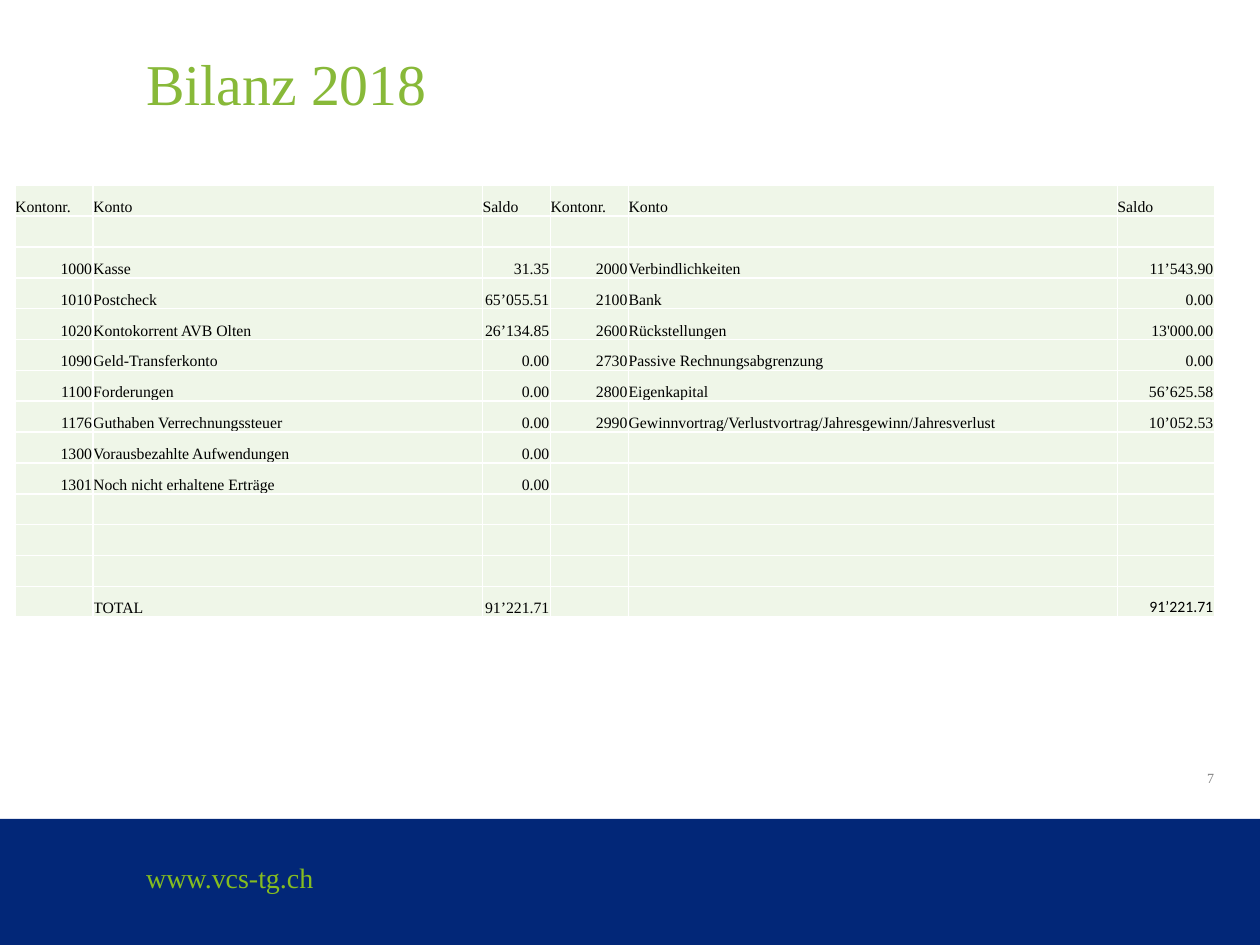
from lxml import etree
from pptx import Presentation
from pptx.dml.color import RGBColor
from pptx.enum.shapes import MSO_SHAPE
from pptx.enum.text import MSO_ANCHOR, MSO_AUTO_SIZE, PP_ALIGN
from pptx.oxml import parse_xml
from pptx.oxml.ns import nsdecls, qn
from pptx.util import Inches, Pt

RECTANGLE = MSO_SHAPE.RECTANGLE
TOP, BOTTOM = MSO_ANCHOR.TOP, MSO_ANCHOR.BOTTOM
LEFT, RIGHT = PP_ALIGN.LEFT, PP_ALIGN.RIGHT
NO_AUTOFIT = MSO_AUTO_SIZE.NONE

SERIF, SANS = "Times New Roman", "Calibri"
NAVY, GREEN, TITLE_GREEN = "022778", "85BC20", "88B939"
GRAY, BLACK, WHITE, PALE_GREEN = "808080", "000000", "FFFFFF", "EFF6E8"

TITLE = "Bilanz 2018"
WEBSITE = "www.vcs-tg.ch"
PAGE_NUMBER = "7"
HEADINGS = ("Kontonr.", "Konto", "Saldo")
ASSETS = [
    ("1000", "Kasse", "31.35"),
    ("1010", "Postcheck", "65’055.51"),
    ("1020", "Kontokorrent AVB Olten", "26’134.85"),
    ("1090", "Geld-Transferkonto", "0.00"),
    ("1100", "Forderungen", "0.00"),
    ("1176", "Guthaben Verrechnungssteuer", "0.00"),
    ("1300", "Vorausbezahlte Aufwendungen", "0.00"),
    ("1301", "Noch nicht erhaltene Erträge", "0.00"),
]
LIABILITIES = [
    ("2000", "Verbindlichkeiten", "11’543.90"),
    ("2100", "Bank", "0.00"),
    ("2600", "Rückstellungen", "13'000.00"),
    ("2730", "Passive Rechnungsabgrenzung", "0.00"),
    ("2800", "Eigenkapital", "56’625.58"),
    ("2990", "Gewinnvortrag/Verlustvortrag/Jahresgewinn/Jahresverlust", "10’052.53"),
]
ASSET_TOTAL = ("", "TOTAL", "91’221.71")
LIABILITY_TOTAL = ("", "", "91’221.71")
BLANK = ("", "", "")

COLUMN_WIDTHS = (0.62, 3.09, 0.54, 0.62, 3.88, 0.77)
NAME_COLUMNS = (1, 4)
ROW_COUNT = 14
TABLE_LEFT, TABLE_TOP, TABLE_HEIGHT = 0.12, 1.47, 3.43


def color(hex_value):
    """Turn a hex string into a colour."""
    return RGBColor.from_string(hex_value)


def add_run(paragraph, text, size, hex_value, font_name=SERIF):
    """Append one formatted run."""
    run = paragraph.add_run()
    run.text = text
    run.font.size = Pt(size)
    run.font.name = font_name
    run.font.color.rgb = color(hex_value)


def clear_margins(frame):
    """Set all insets of a text frame to zero."""
    frame.margin_left = frame.margin_right = 0
    frame.margin_top = frame.margin_bottom = 0


def add_label(slide, box, text, size, hex_value):
    """Add a one-line text box."""
    frame = slide.shapes.add_textbox(*map(Inches, box)).text_frame
    clear_margins(frame)
    frame.word_wrap = True
    add_run(frame.paragraphs[0], text, size, hex_value)


def add_title(slide):
    """Place and format the title."""
    title = slide.shapes.title
    title.left, title.top = Inches(1.16), Inches(0.34)
    title.width, title.height = Inches(8.33), Inches(0.58)
    frame = title.text_frame
    clear_margins(frame)
    frame.auto_size = NO_AUTOFIT
    frame.vertical_anchor = TOP
    paragraph = frame.paragraphs[0]
    paragraph.alignment = LEFT
    paragraph.line_spacing = Pt(42.2)
    add_run(paragraph, TITLE, 33, TITLE_GREEN)


def add_footer(slide):
    """Add the footer band, the website and the page number."""
    band = slide.shapes.add_shape(RECTANGLE, *map(Inches, (0, 6.5, 10, 1)))
    band.shadow.inherit = False
    band.fill.solid()
    band.fill.fore_color.rgb = color(NAVY)
    band.line.fill.background()
    add_label(slide, (1.16, 6.83, 3.58, 0.33), WEBSITE, 16, GREEN)
    add_label(slide, (9.58, 6.11, 0.33, 0.13), PAGE_NUMBER, 8, GRAY)


def balance_rows():
    """Pair both sides of the balance, padded down to the total row."""
    def side(accounts, total):
        rows = [HEADINGS, BLANK, *accounts]
        return rows + [BLANK] * (ROW_COUNT - 1 - len(rows)) + [total]

    pairs = zip(side(ASSETS, ASSET_TOTAL), side(LIABILITIES, LIABILITY_TOTAL))
    return [left + right for left, right in pairs]


def format_cell(cell):
    """Set margins, white borders and the fill of a cell."""
    cell.margin_left = cell.margin_bottom = 0
    cell.margin_right = cell.margin_top = Inches(0.01)
    cell.vertical_anchor = BOTTOM
    properties = cell._tc.get_or_add_tcPr()
    for edge in ("lnL", "lnR", "lnT", "lnB"):
        properties.append(parse_xml(
            f'<a:{edge} {nsdecls("a")} w="{Pt(1)}"><a:solidFill>'
            f'<a:srgbClr val="{WHITE}"/></a:solidFill></a:{edge}>'))
    cell.fill.solid()
    cell.fill.fore_color.rgb = color(PALE_GREEN)


def add_balance(slide):
    """Add the balance table."""
    balance = slide.shapes.add_table(
        ROW_COUNT, len(COLUMN_WIDTHS), Inches(TABLE_LEFT), Inches(TABLE_TOP),
        Inches(sum(COLUMN_WIDTHS)), Inches(TABLE_HEIGHT)).table
    balance.first_row = balance.horz_banding = False
    for column, width in zip(balance.columns, COLUMN_WIDTHS):
        column.width = Inches(width)
    last_cell = (ROW_COUNT - 1, len(COLUMN_WIDTHS) - 1)
    for row, values in enumerate(balance_rows()):
        balance.rows[row].height = Inches(TABLE_HEIGHT / ROW_COUNT)
        for column, value in enumerate(values):
            cell = balance.cell(row, column)
            format_cell(cell)
            paragraph = cell.text_frame.paragraphs[0]
            if not value:
                etree.SubElement(paragraph._p, qn("a:endParaRPr"), sz="900")
                continue
            is_number = row > 0 and column not in NAME_COLUMNS
            paragraph.alignment = RIGHT if is_number else LEFT
            font_name = SANS if (row, column) == last_cell else SERIF
            add_run(paragraph, value, 9, BLACK, font_name)


def main():
    """Build and save the slide."""
    presentation = Presentation()
    presentation.slide_width, presentation.slide_height = Inches(10), Inches(7.5)
    slide = presentation.slides.add_slide(presentation.slide_layouts[5])
    add_footer(slide)
    add_title(slide)
    add_balance(slide)
    presentation.save("out.pptx")


if __name__ == "__main__":
    main()
